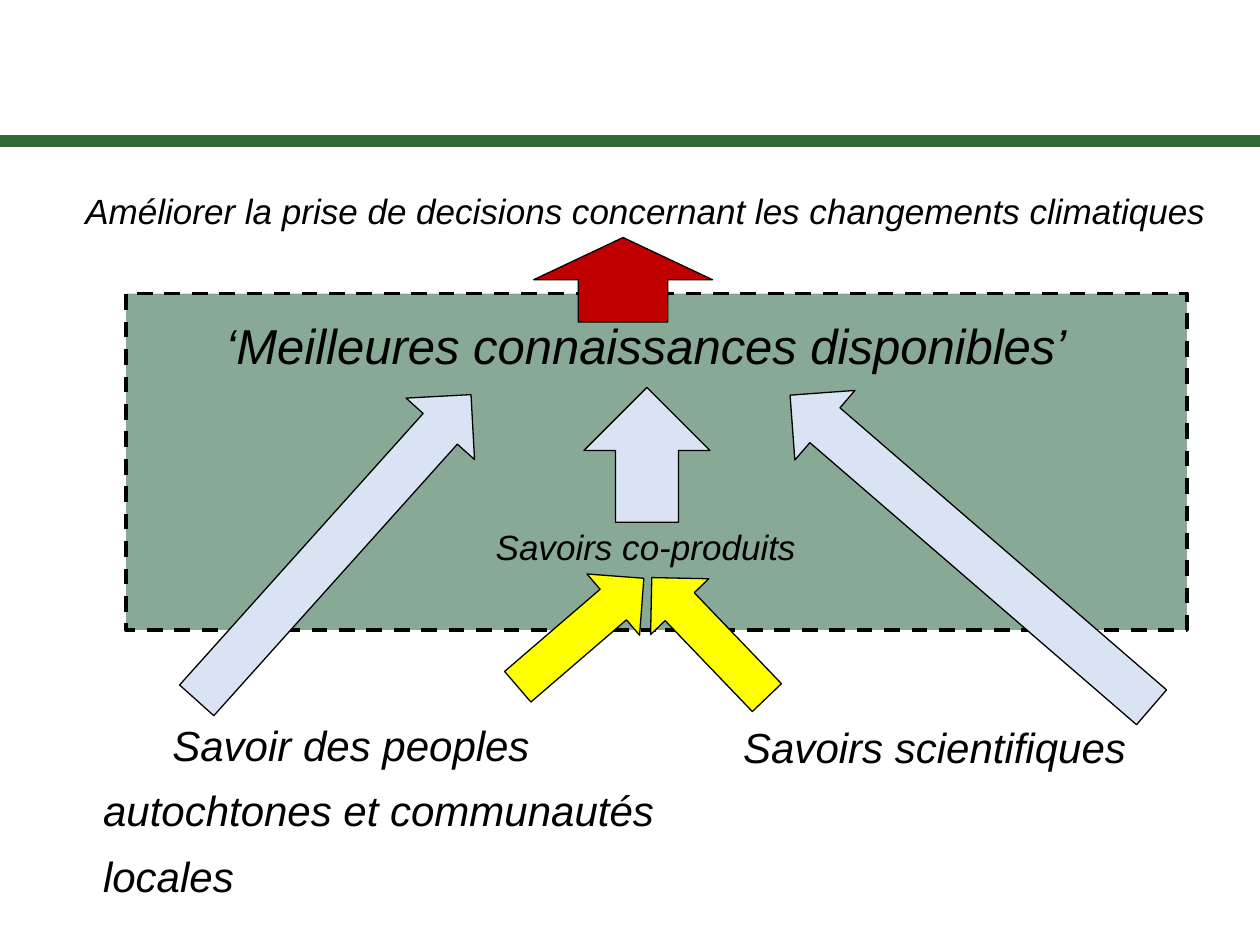
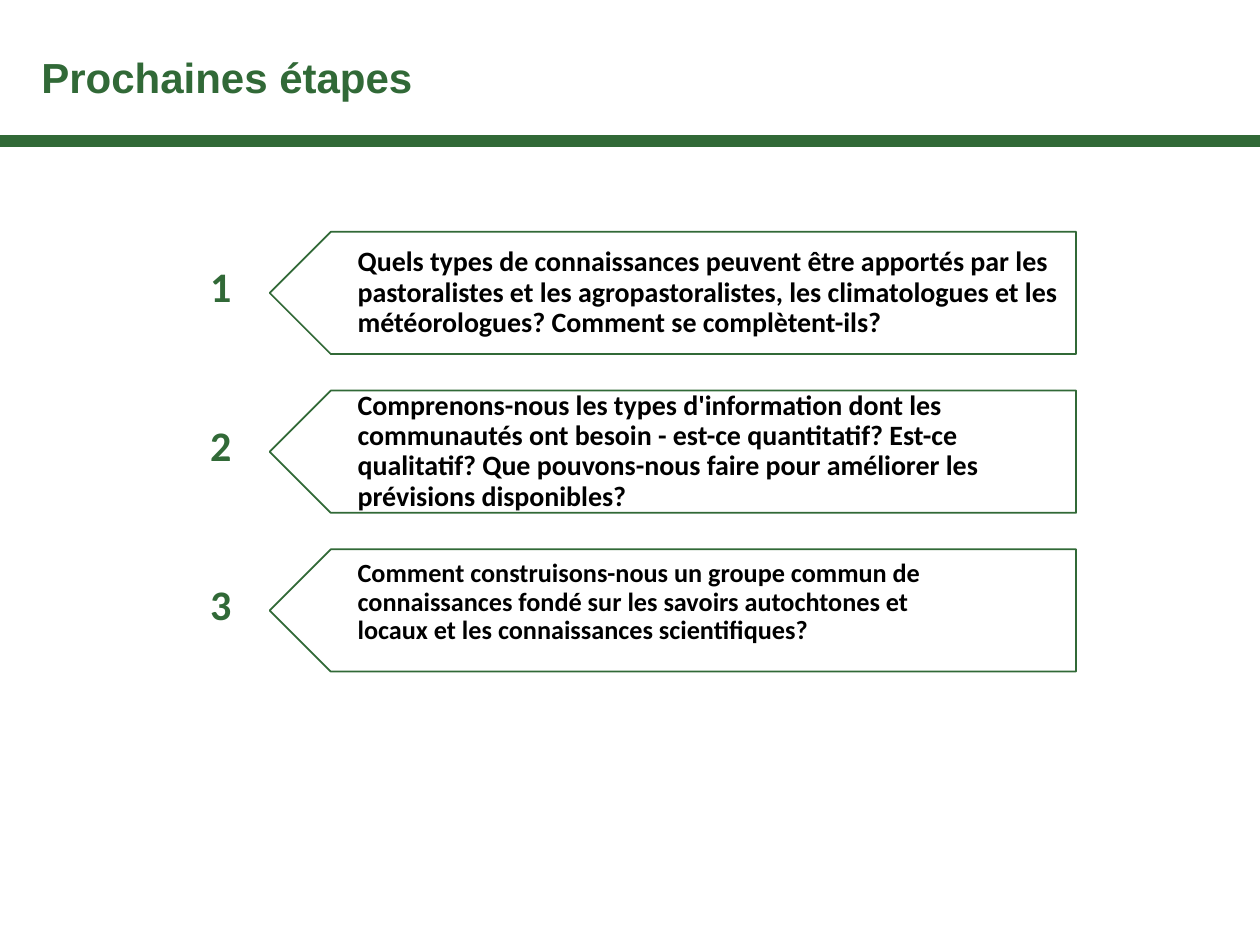
from pptx import Presentation
from pptx.dml.color import RGBColor
from pptx.enum.dml import MSO_LINE
from pptx.enum.shapes import MSO_SHAPE
from pptx.enum.text import MSO_ANCHOR, PP_ALIGN
from pptx.util import Inches, Pt

RECT, ARROW, PLATE = MSO_SHAPE.RECTANGLE, MSO_SHAPE.RIGHT_ARROW, MSO_SHAPE.PENTAGON
MIDDLE, LEFT, CENTER = MSO_ANCHOR.MIDDLE, PP_ALIGN.LEFT, PP_ALIGN.CENTER
DASH = MSO_LINE.DASH
COLS, ROWS = 100, 75
COLORS = {"green": "316937", "sage": "88A995", "pale": "DAE3F3", "red": "C00000",
          "yellow": "FFFF00", "white": "FFFFFF", "black": "000000"}

# column, row, width, height, turn, colour
ARROWS = [
    (46, 31.1, 10.7, 10, 270, "pale"),
    (46.1, 15.1, 6.7, 14.2, 270, "red"),
    (39.5, 47, 13.2, 6.4, 319.3, "yellow"),
    (10.2, 39.8, 32.6, 7.3, 311.9, "pale"),
    (58.1, 40.1, 37.9, 7.3, 220.8, "pale"),
    (49.7, 47.4, 13.2, 6.4, 226.2, "yellow"),
]

# text, size, width, lift above the middle of the plate
STEPS = [
    ("Quels types de connaissances peuvent être apportés par les pastoralistes et "
     "les agropastoralistes, les climatologues et les météorologues? "
     "Comment se complètent-ils?", 16, 57.8, 0),
    ("Comprenons-nous les types d'information dont les communautés ont besoin - "
     "est-ce quantitatif? Est-ce qualitatif? Que pouvons-nous faire pour améliorer "
     "les prévisions disponibles?", 16, 57.8, 0),
    ("Comment construisons-nous un groupe commun de connaissances fondé sur les "
     "savoirs autochtones et locaux et les connaissances scientifiques?", 15, 50, 0.6),
]


class Deck:
    """Holds the style and the current slide; lengths are grid columns and rows."""

    def __init__(self):
        self.prs = Presentation()
        self.prs.slide_width, self.prs.slide_height = Inches(10), Inches(7.5)
        self.slide = None

    def frame(self, x, y, w, h):
        col, row = self.prs.slide_width / COLS, self.prs.slide_height / ROWS
        return [round(n) for n in (x * col, y * row, w * col, h * row)]

    def color(self, name):
        return RGBColor.from_string(COLORS[name])

    def page(self, title=None):
        self.slide = self.prs.slides.add_slide(self.prs.slide_layouts[6])
        self.shape(RECT, (0, 10.8, COLS, 0.8), "green", "green", 1)
        if title:
            self.text([title], (2.3, 3.3, 95, 5.5), 24, color="green", bold=True)

    def shape(self, kind, box, fill, line="black", width=0.75, turn=0, dash=None):
        item = self.slide.shapes.add_shape(kind, *self.frame(*box))
        item.shadow.inherit = False
        item.rotation = turn
        item.fill.solid()
        item.fill.fore_color.rgb = self.color(fill)
        item.line.color.rgb = self.color(line)
        item.line.width = Pt(width)
        if dash:
            item.line.dash_style = dash

    def text(self, lines, box, size, font="Arial", color="black", bold=False,
             italic=False, align=LEFT, pitch=1, gap=0, indent=0):
        """Write one paragraph a line; indent moves the first one, in columns."""
        frame = self.slide.shapes.add_textbox(*self.frame(*box)).text_frame
        frame.word_wrap = True
        frame.vertical_anchor = MIDDLE
        for i, line in enumerate(lines):
            para = frame.add_paragraph() if i else frame.paragraphs[0]
            para.text = line
            para.alignment = align
            para.line_spacing = pitch
            if i:
                para.space_before = Pt(gap)
            elif indent:
                shift = self.frame(indent, 0, 0, 0)[0]
                para._p.get_or_add_pPr().set("indent", str(shift))
            para.font.name = font
            para.font.size = Pt(size)
            para.font.bold = bold
            para.font.italic = italic
            para.font.color.rgb = self.color(color)


def draw_flow(deck):
    deck.page()
    deck.shape(RECT, (10, 23.3, 84.2, 26.7), "sage", width=2.25, dash=DASH)
    for line, mid, size in [
        ("Améliorer la prise de decisions concernant les changements climatiques", 16.7, 20),
        ("‘Meilleures connaissances disponibles’", 27.4, 28),
        ("Savoirs co-produits", 43.4, 20),
    ]:
        deck.text([line], (2.5, mid - 3, 97.5, 6), size, italic=True, align=CENTER)
    deck.text(["Savoir des peoples", "autochtones et communautés", "locales"],
              (7.2, 56.3, 48, 16), 24, italic=True, gap=8.4, indent=5.5)
    deck.text(["Savoirs scientifiques"], (58, 56.3, 36, 6), 24, italic=True)
    for *box, turn, color in ARROWS:
        deck.shape(ARROW, box, color, turn=turn)


def draw_steps(deck):
    deck.page("Prochaines étapes")
    high = 9.7
    for i, (line, size, wide, lift) in enumerate(STEPS):
        top = 18.4 + 12.6 * i
        deck.shape(PLATE, (21.4, top, 64, high), "white", "green", 1, turn=180)
        deck.text([line], (27.4, top - lift, wide, high), size, "Calibri",
                  bold=True, pitch=0.9)
        deck.text([str(i + 1)], (15.7, top + 1.8, 3.7, 5), 24, "Calibri", "green", bold=True)


def main():
    deck = Deck()
    draw_flow(deck)
    draw_steps(deck)
    deck.prs.save("out.pptx")


if __name__ == "__main__":
    main()
